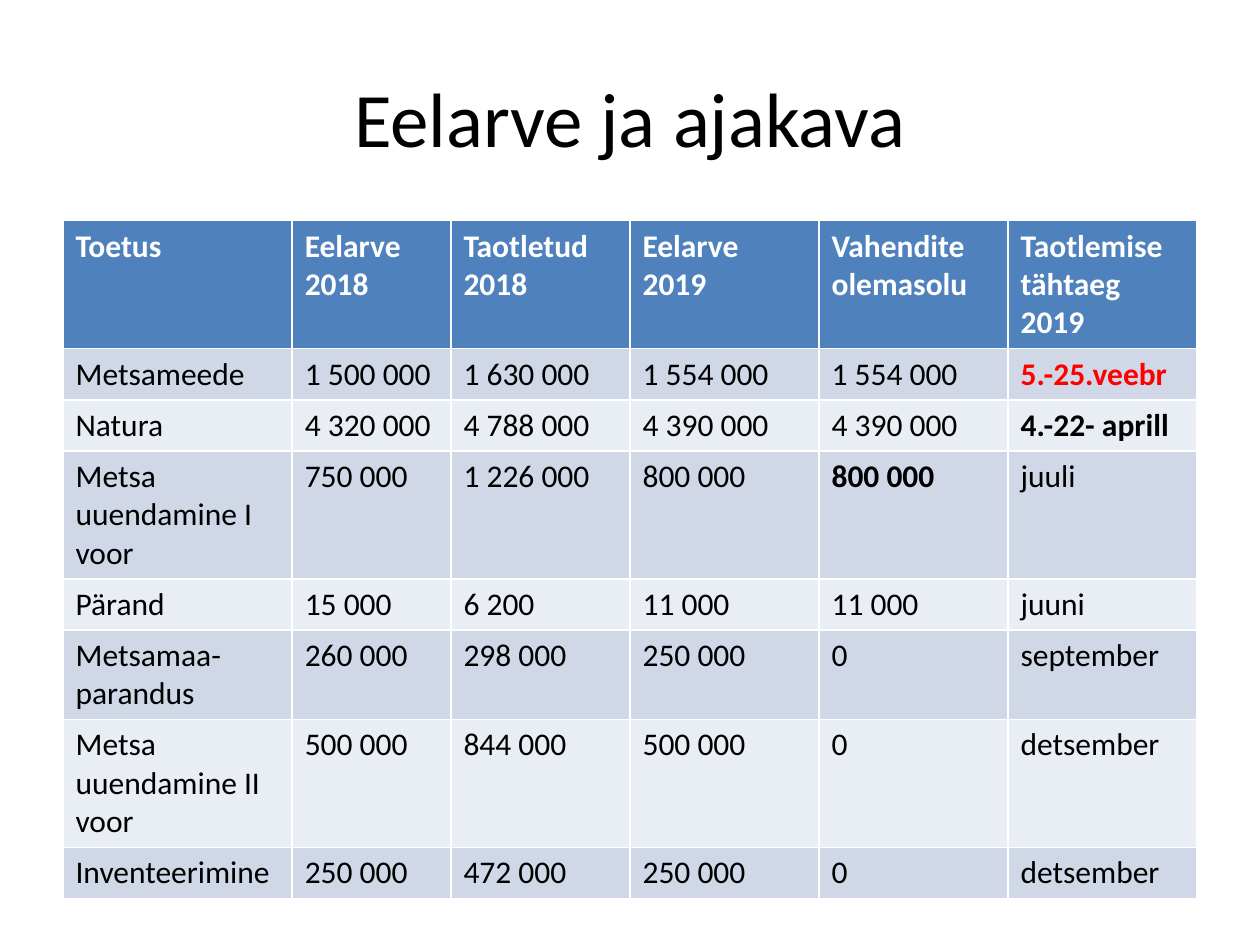
import pptx
import pptx.util
import pptx.dml.color
import pptx.enum.text
from pptx.util import Cm

TITLE = "Eelarve ja ajakava"
HEADER = ["Toetus", "Eelarve 2018", "Taotletud 2018", "Eelarve 2019",
          "Vahendite olemasolu", "Taotlemise tähtaeg 2019"]
GRANTS = [
    ["Metsameede", "1 500 000", "1 630 000", "1 554 000", "1 554 000", "5.-25.veebr"],
    ["Natura", "4 320 000", "4 788 000", "4 390 000", "4 390 000", "4.-22- aprill"],
    ["Metsa uuendamine I voor", "750 000", "1 226 000", "800 000", "800 000", "juuli"],
    ["Pärand", "15 000", "6 200", "11 000", "11 000", "juuni"],
    ["Metsamaa-parandus", "260 000", "298 000", "250 000", "0", "september"],
    ["Metsa uuendamine II voor", "500 000", "844 000", "500 000", "0", "detsember"],
    ["Inventeerimine", "250 000", "472 000", "250 000", "0", "detsember"],
]
# (row, column) of the emphasised cells, with their text colour
BOLD_CELLS = {(1, 5): "FF0000", (2, 5): "000000", (3, 4): "000000"}
COLUMN_WIDTHS = [4.62, 3.2, 3.61, 3.81, 3.81, 3.81]
ROW_HEIGHT = 1.03
HEADER_FILL = "4F81BD"
BAND_FILLS = ["D0D8E8", "E9EDF4"]


def rgb(value):
    return pptx.dml.color.RGBColor.from_string(value)


def format_text(tf, size, color, bold=False):
    for p in tf.paragraphs:
        for r in p.runs:
            r.font.name = "Calibri"
            r.font.size = pptx.util.Pt(size)
            r.font.bold = bold
            r.font.color.rgb = rgb(color)


def add_title(s):
    sp = s.shapes.title
    sp.left, sp.top, sp.width, sp.height = Cm(1.27), Cm(0.76), Cm(22.86), Cm(3.18)
    tf = sp.text_frame
    tf.text = TITLE
    tf.vertical_anchor = pptx.enum.text.MSO_ANCHOR.MIDDLE
    tf.paragraphs[0].alignment = pptx.enum.text.PP_ALIGN.CENTER
    format_text(tf, 44, "000000")


def add_budget_table(s):
    rows = [HEADER] + GRANTS
    table = s.shapes.add_table(
        len(rows), len(HEADER), Cm(1.27), Cm(4.45),
        Cm(sum(COLUMN_WIDTHS)), Cm(ROW_HEIGHT * len(rows))).table
    for column, width in zip(table.columns, COLUMN_WIDTHS):
        column.width = Cm(width)
    for i, row in enumerate(rows):
        table.rows[i].height = Cm(ROW_HEIGHT)
        for j, text in enumerate(row):
            is_header = i == 0
            cell = table.cell(i, j)
            cell.text_frame.text = text
            cell.fill.solid()
            cell.fill.fore_color.rgb = rgb(
                HEADER_FILL if is_header else BAND_FILLS[(i - 1) % 2])
            color = "FFFFFF" if is_header else BOLD_CELLS.get((i, j), "000000")
            format_text(cell.text_frame, 18, color, is_header or (i, j) in BOLD_CELLS)


def main():
    prs = pptx.Presentation()
    prs.slide_width, prs.slide_height = Cm(25.4), Cm(19.05)
    s = prs.slides.add_slide(prs.slide_layouts[5])
    add_title(s)
    add_budget_table(s)
    prs.save("out.pptx")


if __name__ == "__main__":
    main()
